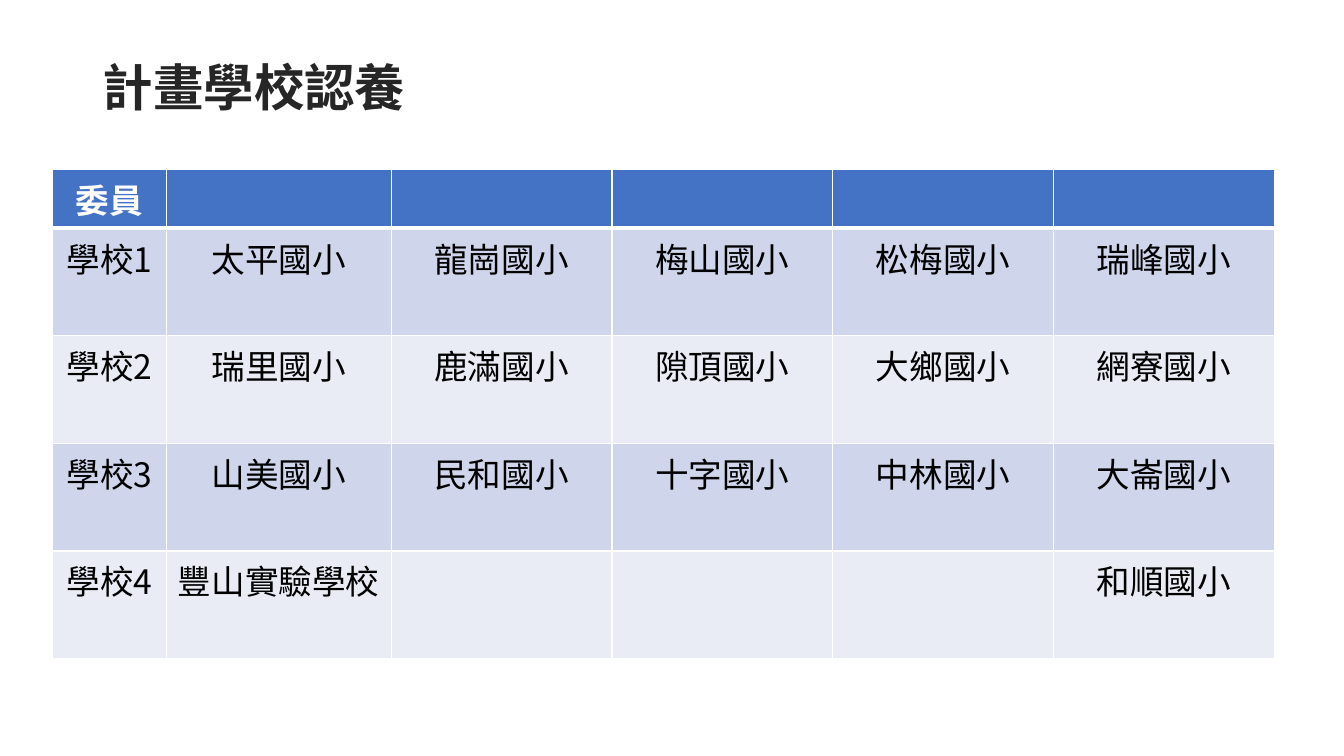
from dataclasses import dataclass

from lxml import etree
from pptx import Presentation
from pptx import util as u
from pptx.dml.color import RGBColor
from pptx.enum import text
from pptx.oxml import ns


@dataclass(frozen=True)
class RowStyle:
    fill: str
    color: str
    bold: bool = False
    top: float = 1
    bottom: float = 1


TABLE_FONT = "Noto Sans CJK SC"
TITLE_FONT = "Noto Sans CJK TC"
WHITE = "FFFFFF"
HEADER = RowStyle("4472C4", WHITE, bold=True, bottom=3)
FIRST = RowStyle("CFD5EA", "000000", top=3)
ODD = RowStyle("CFD5EA", "000000")
EVEN = RowStyle("E9EBF5", "000000")

COL_WIDTHS = [1.13, 2.23] + [2.19] * 4
ROW_HEIGHT = 0.58
ROWS = [
    (HEADER, ["委員", "", "", "", "", ""]),
    (FIRST, ["學校1", "太平國小", "龍崗國小", "梅山國小", "松梅國小", "瑞峰國小"]),
    (EVEN, ["學校2", "瑞里國小", "鹿滿國小", "隙頂國小", "大鄉國小", "網寮國小"]),
    (ODD, ["學校3", "山美國小", "民和國小", "十字國小", "中林國小", "大崙國小"]),
    (EVEN, ["學校4", "豐山實驗學校", "", "", "", "和順國小"]),
]


def rgb(value: str) -> RGBColor:
    return RGBColor.from_string(value)


def write(tf, content: str, *, size: float, font: str, color: str,
          bold: bool = False, align=text.PP_ALIGN.LEFT, spacing: float = 1.0) -> None:
    p = tf.paragraphs[0]
    p.alignment = align
    p.line_spacing = spacing
    if not content:
        return
    r = p.add_run()
    r.text = content
    r.font.size = u.Pt(size)
    r.font.bold = bold
    r.font.color.rgb = rgb(color)
    r.font.name = font
    # East Asian glyphs take their own typeface element
    etree.SubElement(r.font._element, ns.qn("a:ea"), typeface=font)


def add_border(cell, side: str, width: float) -> None:
    tc_pr = cell._tc.get_or_add_tcPr()
    ln = etree.SubElement(tc_pr, ns.qn(f"a:ln{side}"), w=str(u.Pt(width)))
    fill = etree.SubElement(ln, ns.qn("a:solidFill"))
    etree.SubElement(fill, ns.qn("a:srgbClr"), val=WHITE)


def style_cell(cell, content: str, style: RowStyle) -> None:
    for side, width in (("L", 1), ("R", 1), ("T", style.top), ("B", style.bottom)):
        add_border(cell, side, width)
    cell.fill.solid()
    cell.fill.fore_color.rgb = rgb(style.fill)
    write(cell.text_frame, content, size=24, font=TABLE_FONT, color=style.color,
          bold=style.bold, align=text.PP_ALIGN.CENTER)


def add_title(s) -> None:
    sp = s.shapes.title
    sp.left, sp.top = u.Inches(0.92), u.Inches(0.51)
    sp.width, sp.height = u.Inches(11.5), u.Inches(0.77)
    tf = sp.text_frame
    tf.auto_size = text.MSO_AUTO_SIZE.NONE
    tf.vertical_anchor = text.MSO_ANCHOR.MIDDLE
    write(tf, "計畫學校認養", size=36, font=TITLE_FONT, color="262626",
          bold=True, spacing=0.9)


def add_school_table(s) -> None:
    table = s.shapes.add_table(
        len(ROWS), len(COL_WIDTHS), u.Inches(0.52), u.Inches(1.68),
        u.Inches(sum(COL_WIDTHS)), u.Inches(ROW_HEIGHT * len(ROWS))).table
    for column, width in zip(table.columns, COL_WIDTHS):
        column.width = u.Inches(width)
    for row, (style, contents) in zip(table.rows, ROWS):
        row.height = u.Inches(ROW_HEIGHT)
        for cell, content in zip(row.cells, contents):
            style_cell(cell, content, style)


def main() -> None:
    prs = Presentation()
    prs.slide_width, prs.slide_height = u.Inches(13.33), u.Inches(7.5)
    s = prs.slides.add_slide(prs.slide_layouts[5])  # title only
    add_title(s)
    add_school_table(s)
    prs.save("out.pptx")


if __name__ == "__main__":
    main()
